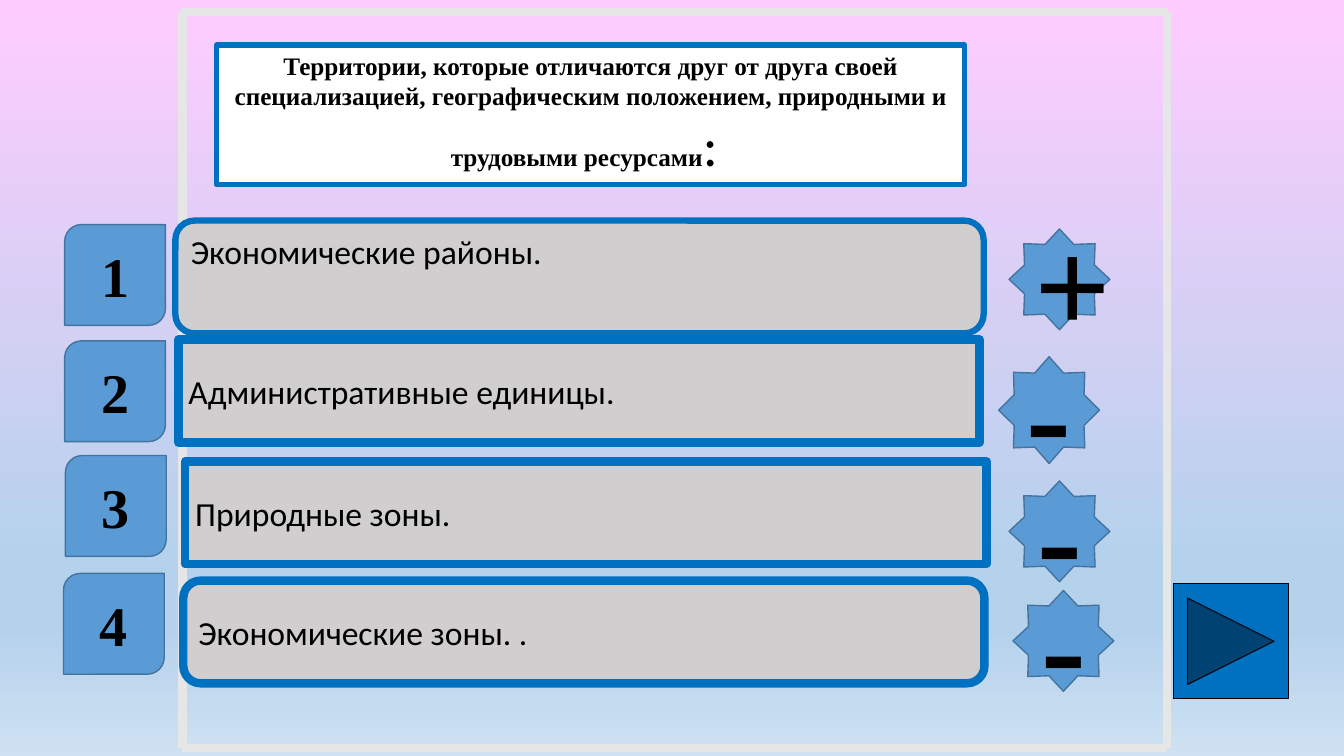
from dataclasses import dataclass

from lxml.etree import SubElement
from pptx import Presentation
from pptx.dml.color import RGBColor
from pptx.enum.shapes import MSO_CONNECTOR, MSO_SHAPE
from pptx.enum.text import MSO_ANCHOR, MSO_AUTO_SIZE, PP_ALIGN
from pptx.oxml.ns import qn
from pptx.util import Cm, Pt


@dataclass(frozen=True)
class Theme:
    sky: tuple = ((0, "FFCCFF"), (74, "B5D2EC"), (83, "B5D2EC"), (100, "CEE1F2"))
    frame: str = "E7E6E6"
    answer: str = "D0CECE"
    border: str = "0070C0"
    paper: str = "FFFFFF"
    accent: str = "5B9BD5"
    accent_line: str = "43739E"
    ink: str = "000000"
    serif: str = "Times New Roman"
    sans: str = "Calibri"
    title_size: int = 18
    answer_size: int = 24
    number_size: int = 40
    mark_size: int = 96


def add_span(para, text, *, font, size, color, bold=False):
    span = para.add_run()
    span.text = text
    span.font.name = font
    span.font.size = Pt(size)
    span.font.bold = bold
    span.font.color.rgb = RGBColor.from_string(color)


class QuizSlide:
    """Draws quiz elements on one page; all lengths are centimetres."""

    def __init__(self, page, theme):
        self.page = page
        self.theme = theme

    def background(self):
        fill = self.page.background.fill
        fill.gradient()
        fill.gradient_angle = 270
        stops = self.page.background._cSld.find(".//" + qn("a:gsLst"))
        for stop in list(stops):
            stops.remove(stop)
        for percent, color in self.theme.sky:
            stop = SubElement(stops, qn("a:gs"), pos=str(percent * 1000))
            SubElement(stop, qn("a:srgbClr"), val=color)

    def frame(self, left, top, right, bottom):
        sides = (
            (left, top, right, top),
            (left, top, left, bottom),
            (left, bottom, right, bottom),
            (right, top, right, bottom),
        )
        for side in sides:
            line = self.page.shapes.add_connector(
                MSO_CONNECTOR.STRAIGHT, *(Cm(value) for value in side))
            line.line.color.rgb = RGBColor.from_string(self.theme.frame)
            line.line.width = Pt(6)
            SubElement(line._element.spPr, qn("a:effectLst"))

    def box(self, kind, left, top, width, height, *, fill, line, weight,
            align=PP_ALIGN.CENTER, anchor=MSO_ANCHOR.MIDDLE):
        box = self.page.shapes.add_shape(
            kind, Cm(left), Cm(top), Cm(width), Cm(height))
        box.shadow.inherit = False
        box.fill.solid()
        box.fill.fore_color.rgb = RGBColor.from_string(fill)
        box.line.color.rgb = RGBColor.from_string(line)
        box.line.width = Pt(weight)
        box.text_frame.word_wrap = True
        box.text_frame.vertical_anchor = anchor
        box.text_frame.paragraphs[0].alignment = align
        return box

    def title(self, text, ending):
        theme = self.theme
        box = self.box(MSO_SHAPE.RECTANGLE, 5.46, 1.14, 18.85, 3.51,
                       fill=theme.paper, line=theme.border, weight=4,
                       anchor=MSO_ANCHOR.TOP)
        box.text_frame.auto_size = MSO_AUTO_SIZE.SHAPE_TO_FIT_TEXT
        para = box.text_frame.paragraphs[0]
        add_span(para, text, font=theme.serif, size=theme.title_size,
                 color=theme.ink, bold=True)
        add_span(para, ending, font=theme.sans, size=theme.number_size,
                 color=theme.ink)

    def answer(self, text, left, top, width=20.19, height=2.59, *,
               rounding=0.0, weight=6, anchor=MSO_ANCHOR.MIDDLE):
        theme = self.theme
        box = self.box(MSO_SHAPE.ROUNDED_RECTANGLE, left, top, width, height,
                       fill=theme.answer, line=theme.border, weight=weight,
                       align=PP_ALIGN.LEFT, anchor=anchor)
        box.adjustments[0] = rounding
        add_span(box.text_frame.paragraphs[0], text, font=theme.sans,
                 size=theme.answer_size, color=theme.ink)

    def badge(self, kind, text, left, top, height=2.54, *, size):
        theme = self.theme
        box = self.box(kind, left, top, 2.54, height, fill=theme.accent,
                       line=theme.accent_line, weight=1)
        add_span(box.text_frame.paragraphs[0], text, font=theme.serif,
                 size=size, color=theme.ink, bold=True)

    def next_button(self, left, top, size):
        self.box(MSO_SHAPE.ACTION_BUTTON_FORWARD_OR_NEXT, left, top, size, size,
                 fill=self.theme.border, line=self.theme.ink, weight=0.75)


def main():
    deck = Presentation()
    deck.slide_width, deck.slide_height = Cm(33.87), Cm(19.05)
    theme = Theme()
    quiz = QuizSlide(deck.slides.add_slide(deck.slide_layouts[6]), theme)

    quiz.background()
    quiz.frame(4.6, 0.3, 29.41, 18.85)

    quiz.answer("Экономические районы.", 4.42, 5.56, 20.37, 2.84,
                rounding=0.17, weight=4.5, anchor=MSO_ANCHOR.TOP)
    quiz.answer("Административные единицы.", 4.5, 8.56)
    quiz.answer("Природные зоны.", 4.67, 11.63)
    quiz.answer("Экономические зоны. .", 4.62, 14.63, rounding=0.17)

    quiz.title("Территории, которые отличаются друг от друга своей "
               "специализацией, географическим положением, природными и "
               "трудовыми ресурсами", ": ")
    quiz.next_button(29.57, 14.71, 2.9)

    number_places = ((1.63, 5.66), (1.63, 8.59), (1.65, 11.48), (1.6, 14.45))
    for number, place in enumerate(number_places, start=1):
        quiz.badge(MSO_SHAPE.ROUND_2_DIAG_RECTANGLE, str(number), *place,
                   size=theme.number_size)

    marks = (("+", 25.43, 5.77), ("-", 25.17, 8.99, 2.69),
             ("-", 25.43, 12.12), ("-", 25.53, 14.88))
    for mark in marks:
        quiz.badge(MSO_SHAPE.STAR_8_POINT, *mark, size=theme.mark_size)

    deck.save("out.pptx")


if __name__ == "__main__":
    main()
